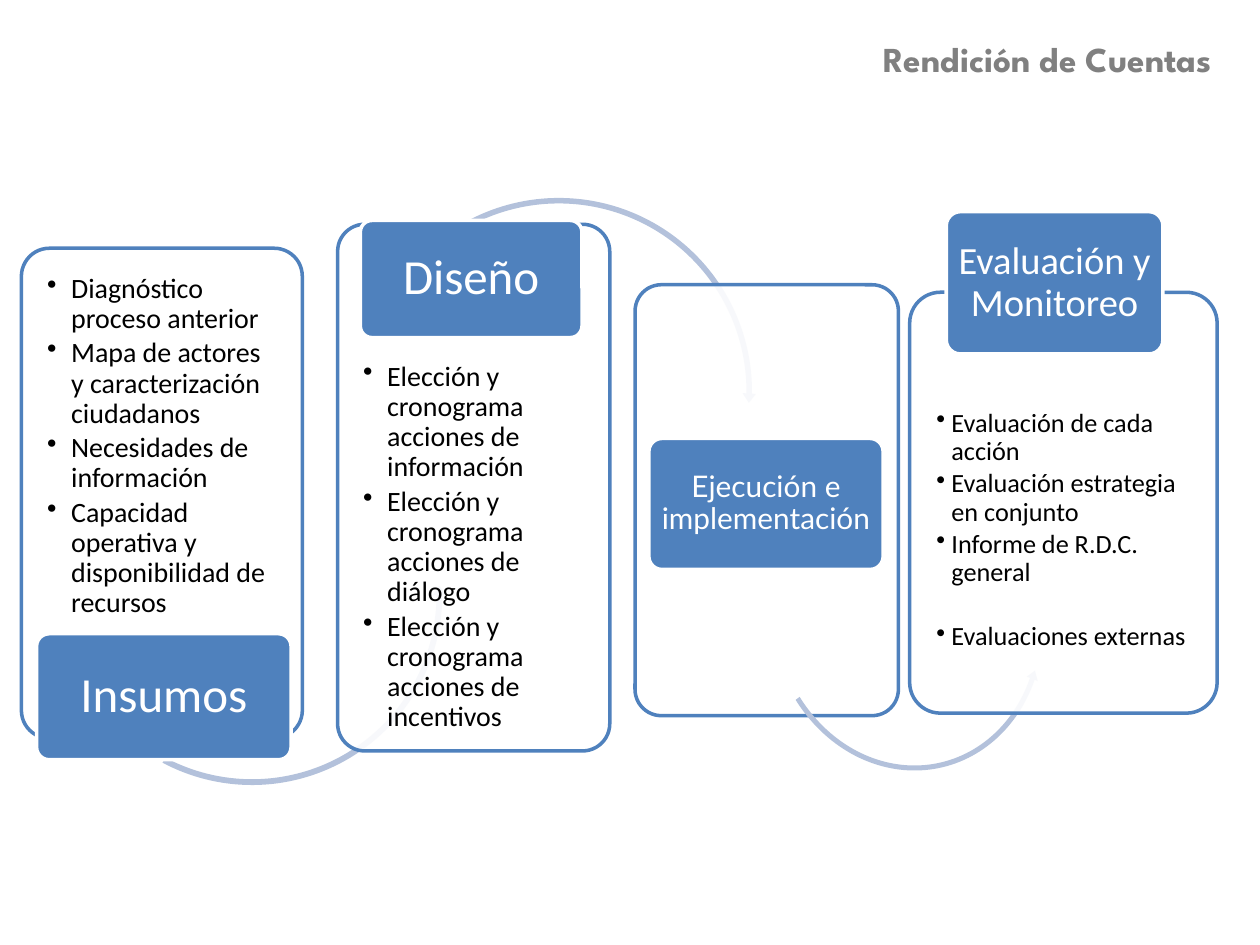
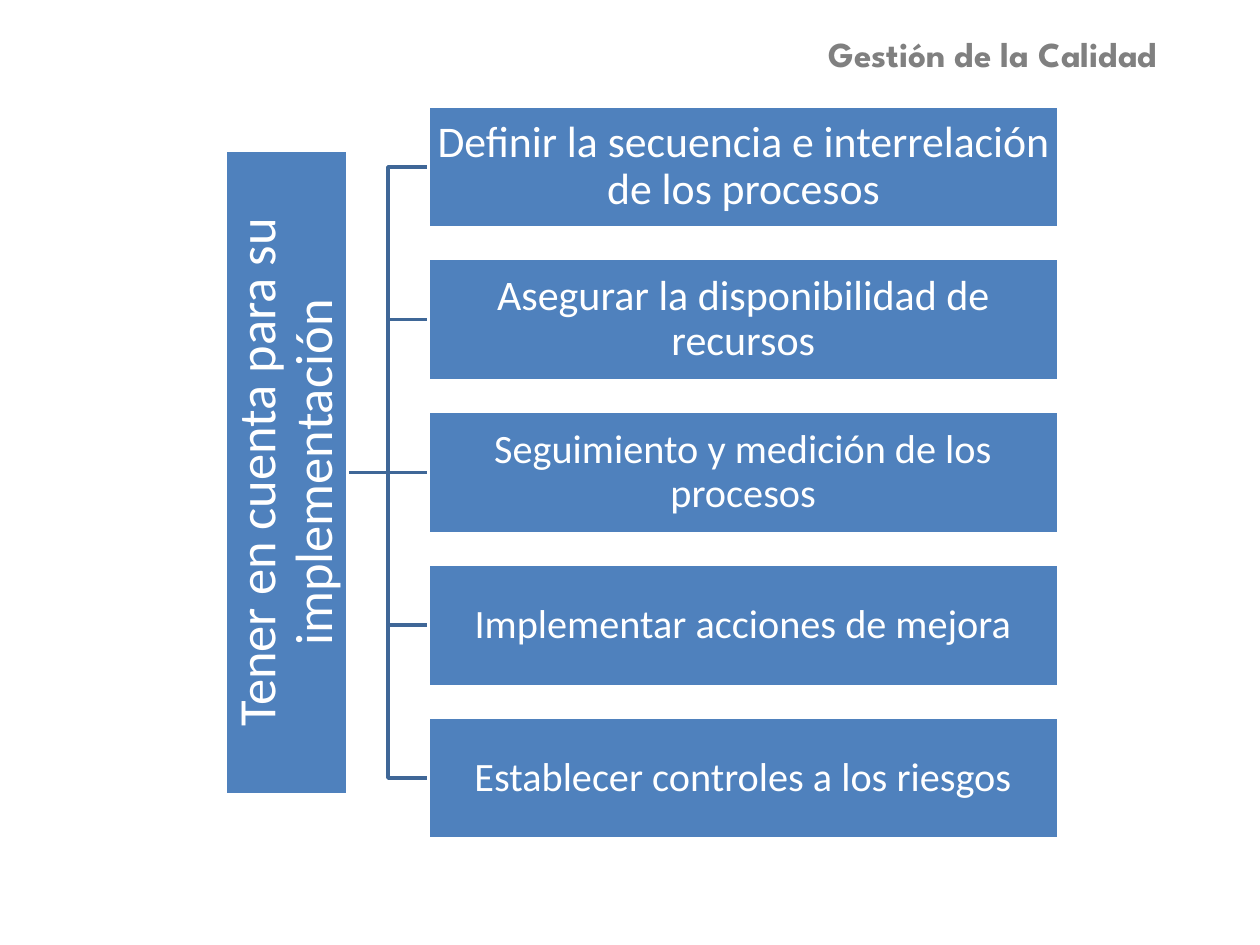
"""Builds two process slides: a four-stage flow and a list of quality duties."""
from lxml import etree
from pptx import Presentation
from pptx.dml.color import RGBColor as Rgb
from pptx.enum.shapes import MSO_CONNECTOR as Wire, MSO_SHAPE as Kind
from pptx.enum.text import MSO_ANCHOR as Anchor, PP_ALIGN as Align
from pptx.oxml.ns import qn
from pptx.util import Inches, Pt

HUES = {"blue": "4F81BD", "dark": "3F6797", "pale": "B3C1DB",
        "white": "FFFFFF", "black": "000000", "gray": "808080"}

STAGES = [
    {"panel": (0.17, 1.97, 2.23, 3.89), "top": 0.14, "size": 16, "dent": 0.19,
     "items": ["Diagnóstico proceso anterior",
               "Mapa de actores y caracterización ciudadanos",
               "Necesidades de información",
               "Capacidad operativa y disponibilidad de recursos"],
     "arrow": (Kind.LEFT_CIRCULAR_ARROW, (0.46, 3.18, 3.08, 3.08), 0,
               (0.015, 1.719, 0.048, 70.818, 0.017)),
     "head": ("Insumos", (0.29, 5.03, 2.02, 1), "Calibri", 28)},
    {"panel": (2.68, 1.78, 2.16, 4.18), "top": 1.03, "size": 16, "dent": 0.19,
     "items": ["Elección y cronograma acciones de información",
               "Elección y cronograma acciones de diálogo",
               "Elección y cronograma acciones de incentivos"],
     "arrow": (Kind.CIRCULAR_ARROW, (2.87, 1.54, 3.13, 3.13), 0,
               (0.014, 1.691, 0.42, 145.622, 0.017)),
     "head": ("Diseño", (2.86, 1.75, 1.76, 0.93), "Calibri", 28)},
    {"panel": (5.04, 2.26, 2.09, 3.42), "items": [],
     "arrow": (Kind.LEFT_CIRCULAR_ARROW, (6.09, 3.65, 2.21, 2.5), 346.2,
               (0.018, 2.13, 23.916, 94.276, 0.021)),
     "head": ("Ejecución e implementación", (5.15, 3.48, 1.86, 1.04), "Lato", 17)},
    {"panel": (7.22, 2.32, 2.44, 3.34), "top": 0.86, "size": 15, "dent": 0.12,
     "items": ["Evaluación de cada acción",
               "Evaluación estrategia en conjunto",
               "Informe de R.D.C. general",
               "Evaluaciones externas"],
     "gap": 18,
     "head": ("Evaluación y Monitoreo", (7.51, 1.68, 1.72, 1.13), "Calibri", 22)},
]

ROOT = ("Tener en cuenta para su implementación", 30)
DUTIES = [("Definir la secuencia e interrelación de los procesos", 25),
          ("Asegurar la disponibilidad de recursos", 24),
          ("Seguimiento y medición de los procesos", 23),
          ("Implementar acciones de mejora", 23),
          ("Establecer controles a los riesgos", 23)]
LEFT, TOP, WIDE, HIGH = 3.4, 0.84, 5, 0.97
STEP = HIGH * 1.25
STEM, TRUNK, LONG = 2.76, 3.08, 5.11


def hue(name):
    return Rgb.from_string(HUES[name])


def assign(thing, **vals):
    for key, val in vals.items():
        setattr(thing, key, val)


def style(para, size, color, face="Calibri", bold=False):
    assign(para.font, size=Pt(size), name=face, bold=bold)
    para.font.color.rgb = hue(color)


def outline(shape, color):
    shape.line.color.rgb = hue(color)
    shape.line.width = Pt(2)


def place(slide, kind, box, fill, edge=None):
    shape = slide.shapes.add_shape(kind, *map(Inches, box))
    shape.shadow.inherit = False
    shape.fill.solid()
    shape.fill.fore_color.rgb = hue(fill)
    if edge:
        outline(shape, edge)
    else:
        shape.line.fill.background()
    return shape


def pad(shape, side, top, anchor):
    frame = shape.text_frame
    assign(frame, word_wrap=True, vertical_anchor=anchor,
           margin_left=Inches(side), margin_right=Inches(side),
           margin_top=Inches(top), margin_bottom=Inches(min(top, 0.14)))
    return frame


def label(shape, text, size, face="Calibri", side=0.02, top=0.02):
    para = pad(shape, side, top, Anchor.MIDDLE).paragraphs[0]
    assign(para, text=text, alignment=Align.CENTER, line_spacing=0.9)
    style(para, size, "white", face)


def bullets(shape, stage):
    frame = pad(shape, 0.14, stage["top"], Anchor.TOP)
    size, dent = stage["size"], Inches(stage["dent"])
    for i, text in enumerate(stage["items"]):
        para = frame.add_paragraph() if i else frame.paragraphs[0]
        assign(para, text=text, alignment=Align.LEFT, line_spacing=0.9,
               space_after=Pt(size * 0.15))
        if i == len(stage["items"]) - 1 and "gap" in stage:
            para.space_before = Pt(stage["gap"])
        props = para._p.get_or_add_pPr()
        props.set("marL", str(dent))
        props.set("indent", str(-dent))
        etree.SubElement(props, qn("a:buChar")).set("char", "•")
        style(para, size, "black")


def start(deck, text, left, top):
    slide = deck.slides.add_slide(deck.slide_layouts[5])
    title = slide.shapes.title
    assign(title, left=Inches(left), top=Inches(top), width=Inches(5), height=Inches(0.44))
    para = pad(title, 0.1, 0.05, Anchor.TOP).paragraphs[0]
    assign(para, text=text, alignment=Align.RIGHT)
    style(para, 20, "gray", "League Spartan", True)
    return slide


def flow(deck):
    slide = start(deck, "Rendición de Cuentas", 4.72, 0.25)
    for stage in STAGES:
        panel = place(slide, Kind.ROUNDED_RECTANGLE, stage["panel"], "white", "blue")
        panel.adjustments[0] = 0.1
        tint = panel._element.spPr.find(qn("a:solidFill"))[0]
        etree.SubElement(tint, qn("a:alpha")).set("val", "90000")
        if stage["items"]:
            bullets(panel, stage)
        if "arrow" in stage:
            kind, box, turn, bends = stage["arrow"]
            arrow = place(slide, kind, box, "pale")
            arrow.rotation = turn
            for i, bend in enumerate(bends):
                arrow.adjustments[i] = bend
        text, box, face, size = stage["head"]
        head = place(slide, Kind.ROUNDED_RECTANGLE, box, "blue", "white")
        head.adjustments[0] = 0.1
        label(head, text, size, face, 0.05, 0.03)


def branch(slide, mid, end):
    """Draws one line from the stem to a duty."""
    if mid == end:
        line = slide.shapes.add_connector(
            Wire.STRAIGHT, *map(Inches, (STEM, mid, LEFT, end)))
        etree.SubElement(line._element.spPr, qn("a:effectLst"))
    else:
        pen = slide.shapes.build_freeform(Inches(STEM), Inches(mid))
        pen.add_line_segments([(Inches(x), Inches(y)) for x, y in
                               ((TRUNK, mid), (TRUNK, end), (LEFT, end))], close=False)
        line = pen.convert_to_shape()
        line.shadow.inherit = False
        line.fill.background()
    outline(line, "dark")
    return line


def tree(deck):
    slide = start(deck, "Gestión de la Calidad", 4.29, 0.21)
    tops = [TOP + i * STEP for i in range(len(DUTIES))]
    core = len(DUTIES) // 2
    mid = tops[core] + HIGH / 2
    lines = [branch(slide, mid, top + HIGH / 2) for top in tops]
    root = place(slide, Kind.RECTANGLE,
                 (STEM - (HIGH + LONG) / 2, tops[core], LONG, HIGH), "blue", "white")
    root.rotation = 270
    label(root, *ROOT)
    for i, (duty, top) in enumerate(zip(DUTIES, tops)):
        box = place(slide, Kind.RECTANGLE, (LEFT, top, WIDE, HIGH), "blue", "white")
        label(box, *duty)
        if i == core:
            lines[i].end_connect(box, 1)


def main():
    deck = Presentation()
    assign(deck, slide_width=Inches(10), slide_height=Inches(7.5))
    flow(deck)
    tree(deck)
    deck.save("out.pptx")


if __name__ == "__main__":
    main()
